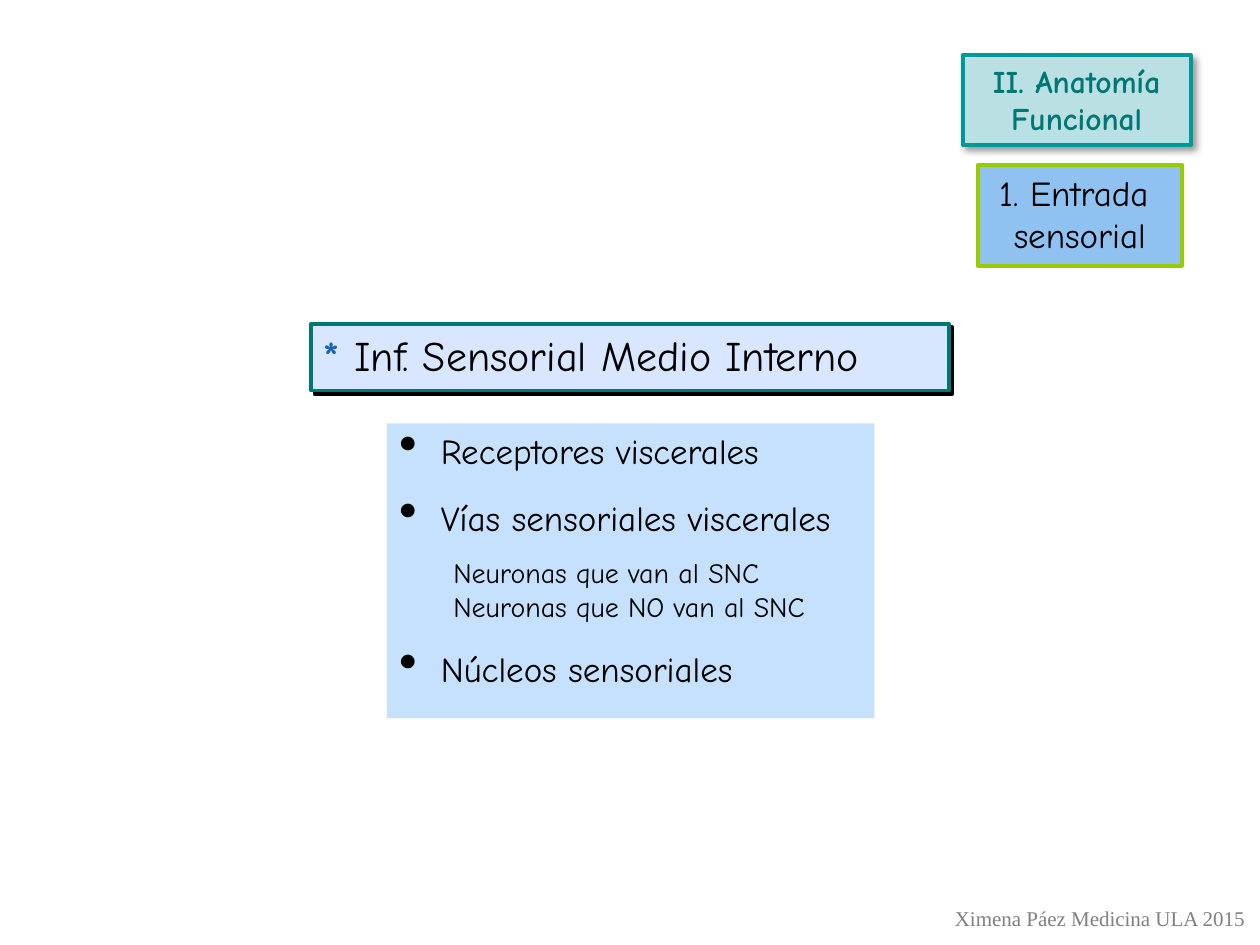
import pptx
import pptx.util
import pptx.dml.color
import pptx.enum.shapes
import pptx.enum.text
import pptx.oxml
import pptx.oxml.ns
from pptx.util import Inches, Pt

RGBColor = pptx.dml.color.RGBColor
BLACK = RGBColor(0x00, 0x00, 0x00)
GRAY = RGBColor(0x80, 0x80, 0x80)
TEAL = RGBColor(0x00, 0x77, 0x74)
LIGHT_TEAL = RGBColor(0xBB, 0xE0, 0xE3)
TEAL_BORDER = RGBColor(0x00, 0x99, 0x99)
LAVENDER = RGBColor(0xD9, 0xE6, 0xFF)
ASTERISK_BLUE = RGBColor(0x16, 0x66, 0xAE)
PALE_BLUE = RGBColor(0xC6, 0xE1, 0xFE)
SKY_BLUE = RGBColor(0x8F, 0xC2, 0xF1)
LIME = RGBColor(0x99, 0xCC, 0x00)

MAIN_FONT = "Comic Neue"
FOOTER_FONT = "Times New Roman"
CENTER = pptx.enum.text.PP_ALIGN.CENTER
LEFT = pptx.enum.text.PP_ALIGN.LEFT
NAMESPACE = pptx.oxml.ns.nsdecls("a")


def format_run(run, size, color=BLACK, bold=False, font=MAIN_FONT):
    run.font.name = font
    run.font.size = Pt(size)
    run.font.bold = bold
    run.font.color.rgb = color


def add_panel(slide, box, fill, border=None):
    panel = slide.shapes.add_shape(
        pptx.enum.shapes.MSO_SHAPE.RECTANGLE, *map(Inches, box))
    panel.shadow.inherit = False
    panel.fill.solid()
    panel.fill.fore_color.rgb = fill
    if border is None:
        panel.line.fill.background()
    else:
        panel.line.color.rgb = border
        panel.line.width = Pt(2.25)
    panel.text_frame.vertical_anchor = pptx.enum.text.MSO_ANCHOR.TOP
    return panel


def cast_shadow(panel, blur, distance, opacity):
    """Give the panel a black shadow towards the lower right."""
    effects = panel._element.spPr.find(pptx.oxml.ns.qn("a:effectLst"))
    effects.append(pptx.oxml.parse_xml(
        f'<a:outerShdw {NAMESPACE} blurRad="{Pt(blur)}" dist="{Pt(distance)}" '
        f'dir="2700000" algn="ctr" rotWithShape="0"><a:srgbClr val="{BLACK}">'
        f'<a:alpha val="{opacity * 1000}"/></a:srgbClr></a:outerShdw>'))


def add_bullet(paragraph, indent):
    properties = paragraph._p.get_or_add_pPr()
    properties.set("marL", str(indent))
    properties.set("indent", str(-indent))
    for bullet_part in ('buClr %s><a:srgbClr val="000000"/></a:buClr>',
                        'buSzPct %s val="150000"/>',
                        'buChar %s char="•"/>'):
        properties.append(pptx.oxml.parse_xml("<a:" + bullet_part % NAMESPACE))


def add_label(slide, box, lines, fill, border, size, color, bold=False):
    label = add_panel(slide, box, fill, border)
    frame = label.text_frame
    frame.word_wrap = False
    frame.text = "\n".join(lines)
    for paragraph in frame.paragraphs:
        paragraph.alignment = CENTER
        format_run(paragraph.runs[0], size, color, bold)
    return label


def add_heading(slide, box):
    heading = add_panel(slide, box, LAVENDER, TEAL)
    cast_shadow(heading, 0, 2.8, 100)
    paragraph = heading.text_frame.paragraphs[0]
    paragraph.alignment = LEFT
    for text, color, bold in (("* ", ASTERISK_BLUE, True),
                              ("Inf. Sensorial Medio Interno", BLACK, False)):
        run = paragraph.add_run()
        run.text = text
        format_run(run, 24, color, bold)


def add_topics(slide, box):
    # Text, whether it is a main topic, space before in points
    topics = (("Receptores viscerales", True, 0),
              ("Vías sensoriales viscerales", True, 14),
              ("Neuronas que van al SNC", False, 10),
              ("Neuronas que NO van al SNC", False, 0),
              ("Núcleos sensoriales", True, 14))
    frame = add_panel(slide, box, PALE_BLUE).text_frame
    frame.word_wrap = True
    frame.text = "\n".join(text for text, _, _ in topics)
    for paragraph, (_, is_main, gap) in zip(frame.paragraphs, topics):
        paragraph.alignment = LEFT
        paragraph.space_before = Pt(gap)
        format_run(paragraph.runs[0], 20 if is_main else 16)
        if is_main:
            add_bullet(paragraph, Inches(0.33))
        else:
            paragraph._p.get_or_add_pPr().set("marL", str(Inches(0.43)))


def add_footer(slide, box):
    frame = slide.shapes.add_textbox(*map(Inches, box)).text_frame
    frame.word_wrap = False
    frame.text = "Ximena Páez Medicina ULA 2015"
    format_run(frame.paragraphs[0].runs[0], 12, GRAY, font=FOOTER_FONT)


def main():
    presentation = pptx.Presentation()
    presentation.slide_width = Inches(10)
    presentation.slide_height = Inches(7.5)
    slide = presentation.slides.add_slide(presentation.slide_layouts[6])

    add_heading(slide, (2.47, 2.57, 5.06, 0.53))
    section = add_label(slide, (7.64, 0.44, 1.81, 0.71),
                        ("II. Anatomía", "Funcional"),
                        LIGHT_TEAL, TEAL_BORDER, 18, TEAL, bold=True)
    cast_shadow(section, 4, 3, 40)
    add_topics(slide, (3.07, 3.36, 3.87, 2.34))
    add_label(slide, (7.76, 1.31, 1.62, 0.8), ("1. Entrada ", "sensorial"),
              SKY_BLUE, LIME, 20, BLACK)
    add_footer(slide, (7.48, 7.14, 2.53, 0.3))

    presentation.save("out.pptx")


if __name__ == "__main__":
    main()
